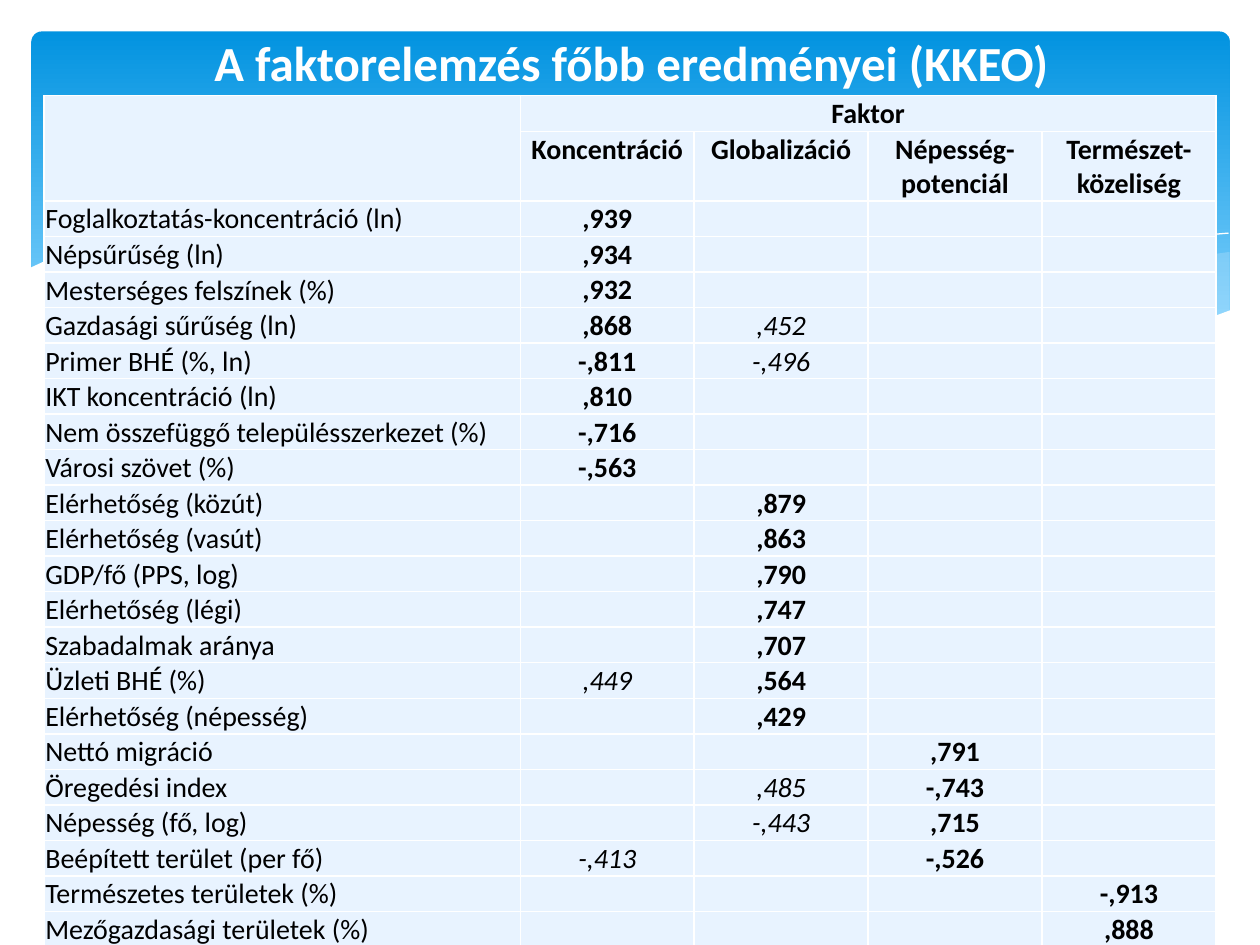
from lxml.etree import SubElement
from pptx import Presentation
from pptx.dml.color import RGBColor as Rgb
from pptx.enum.shapes import MSO_SHAPE as Shape
from pptx.enum.text import MSO_ANCHOR as Anchor, PP_ALIGN as Align
from pptx.oxml import parse_xml
from pptx.oxml.ns import nsdecls, qn
from pptx.util import Pt

COLORS = {"white": "FFFFFF", "black": "000000", "sky": "0293E0",
          "light_sky": "83D3FE", "wave": "C6E7FC", "cell": "E8F3FF"}
COLUMNS, ROWS, STEP = 1000, 750, 9144  # grid of hundredths of an inch

# Waves of the banner, as grid points
RIGHT_WAVE = [(975, 200), (948, 204), (921, 210), (891, 216), (861, 223),
              (805, 237), (753, 248), (706, 257), (661, 265), (691, 269),
              (732, 274), (769, 277), (803, 278), (844, 277), (881, 273),
              (913, 267), (942, 259), (963, 252), (976, 247), (976, 200)]
MIDDLE_WAVE = [(893, 273), (866, 269), (807, 260), (741, 247), (668, 231),
               (613, 218), (569, 208), (528, 200), (489, 194), (442, 189),
               (399, 186), (361, 185), (328, 187), (286, 191), (342, 199),
               (404, 211), (449, 222), (530, 240), (601, 255), (665, 266),
               (722, 274), (773, 277), (818, 278), (857, 277), (893, 273)]
LONG_CURVE = [(309, 195), (328, 192), (353, 189), (387, 187), (433, 187),
              (469, 189), (510, 192), (556, 197), (608, 204), (665, 213),
              (727, 226), (795, 241), (869, 261), (907, 272)]
SHORT_CURVE = [(613, 257), (653, 246), (695, 235), (748, 223), (806, 210),
               (866, 199), (910, 192), (951, 187), (975, 185)]
WHITE_WAVE = [(977, 246), (950, 256), (920, 265), (887, 271), (850, 275),
              (809, 277), (761, 275), (708, 270), (648, 262), (579, 250),
              (503, 233), (447, 220), (391, 207), (340, 197), (292, 190),
              (250, 186), (211, 184), (177, 184), (146, 185), (119, 187),
              (95, 191), (76, 195), (59, 199), (46, 203), (36, 207),
              (23, 213), (23, 329), (977, 329)]

# Factor loadings: label, then {factor column: value}
FACTORS = ["Koncentráció", "Globalizáció", "Népesség-potenciál", "Természet-közeliség"]
LOADINGS = [
    ("Foglalkoztatás-koncentráció (ln)", {1: ",939"}),
    ("Népsűrűség (ln)", {1: ",934"}),
    ("Mesterséges felszínek (%)", {1: ",932"}),
    ("Gazdasági sűrűség (ln)", {1: ",868", 2: ",452"}),
    ("Primer BHÉ (%, ln)", {1: "-,811", 2: "-,496"}),
    ("IKT koncentráció (ln)", {1: ",810"}),
    ("Nem összefüggő településszerkezet (%)", {1: "-,716"}),
    ("Városi szövet (%)", {1: "-,563"}),
    ("Elérhetőség (közút)", {2: ",879"}),
    ("Elérhetőség (vasút)", {2: ",863"}),
    ("GDP/fő (PPS, log)", {2: ",790"}),
    ("Elérhetőség (légi)", {2: ",747"}),
    ("Szabadalmak aránya", {2: ",707"}),
    ("Üzleti BHÉ (%)", {1: ",449", 2: ",564"}),
    ("Elérhetőség (népesség)", {2: ",429"}),
    ("Nettó migráció", {3: ",791"}),
    ("Öregedési index", {2: ",485", 3: "-,743"}),
    ("Népesség (fő, log)", {2: "-,443", 3: ",715"}),
    ("Beépített terület (per fő)", {1: "-,413", 3: "-,526"}),
    ("Természetes területek (%)", {4: "-,913"}),
    ("Mezőgazdasági területek (%)", {4: ",888"}),
]


def rgb(name):
    return Rgb.from_string(COLORS[name])


def write(frame, text, size=16, color="black", bold=False, italic=False,
          align=Align.LEFT, font="Calibri"):
    """Put formatted text in a frame; empty text only keeps the line height."""
    para = frame.paragraphs[0]
    para.alignment = align
    if not text:
        SubElement(para._p, qn("a:endParaRPr"), sz=str(size * 100))
        return
    span = para.add_run()
    span.text = text
    span.font.name, span.font.size = font, Pt(size)
    span.font.bold, span.font.italic = bold, italic
    span.font.color.rgb = rgb(color)


class Slide:
    def __init__(self, deck):
        self.page = deck.slides.add_slide(deck.slide_layouts[5])
        self.shapes = self.page.shapes

    def banner(self, left, top, width, height):
        box = self.shapes.add_shape(Shape.ROUNDED_RECTANGLE, left * STEP, top * STEP,
                                    width * STEP, height * STEP)
        box.adjustments[0] = 0.03
        box.shadow.inherit = False
        box.line.fill.background()
        box.fill.gradient()
        box.fill.gradient_angle = 270
        for stop, name, place in zip(box.fill.gradient_stops, ("sky", "light_sky"), (0, 0.9)):
            stop.color.rgb, stop.position = rgb(name), place

    def outline(self, points, fill=None, alpha=100):
        """A filled wave, or a thin white curve when there is no fill."""
        builder = self.shapes.build_freeform(*points[0], scale=STEP)
        builder.add_line_segments(points[1:], close=fill is not None)
        wave = builder.convert_to_shape()
        wave.shadow.inherit = False
        if fill is None:
            wave.fill.background()
            wave.line.color.rgb = rgb("white")
            wave.line.width = Pt(0)
            return
        wave.line.fill.background()
        wave.fill.solid()
        wave.fill.fore_color.rgb = rgb(fill)
        if alpha < 100:
            tint = wave.element.spPr.find(".//" + qn("a:srgbClr"))
            SubElement(tint, qn("a:alpha"), val=str(alpha * 1000))

    def title(self, text, left, top, width, height):
        box = self.shapes.title
        box.left, box.top, box.width, box.height = (
            n * STEP for n in (left, top, width, height))
        box.text_frame.vertical_anchor = Anchor.MIDDLE
        write(box.text_frame, text, size=28, color="white", bold=True, align=Align.CENTER)
        box.element.getparent().append(box.element)  # in front of the banner

    def table(self, left, top, widths, heights):
        frame = self.shapes.add_table(len(heights), len(widths), left * STEP, top * STEP,
                                      sum(widths) * STEP, sum(heights) * STEP)
        grid = frame.table
        for column, width in zip(grid.columns, widths):
            column.width = width * STEP
        for row, height in zip(grid.rows, heights):
            row.height = height * STEP
        return grid

    def cell(self, cell, text="", anchor=Anchor.TOP, **style):
        cell.margin_left = cell.margin_right = cell.margin_top = STEP
        cell.margin_bottom = 0
        cell.vertical_anchor = anchor
        write(cell.text_frame, text, **style)
        for side in ("lnL", "lnR", "lnT", "lnB"):
            cell._tc.get_or_add_tcPr().append(parse_xml(
                f'<a:{side} {nsdecls("a")} w="12700"><a:solidFill>'
                f'<a:srgbClr val="{COLORS["white"]}"/></a:solidFill></a:{side}>'))
        cell.fill.solid()
        cell.fill.fore_color.rgb = rgb("cell")


def main():
    deck = Presentation()
    deck.slide_width, deck.slide_height = COLUMNS * STEP, ROWS * STEP
    slide = Slide(deck)

    # Banner with waves
    slide.banner(25, 25, 951, 270)
    slide.outline(RIGHT_WAVE, fill="wave", alpha=29)
    slide.outline(MIDDLE_WAVE, fill="wave", alpha=40)
    slide.outline(LONG_CURVE)
    slide.outline(SHORT_CURVE)
    slide.outline(WHITE_WAVE, fill="white")
    slide.title("A faktorelemzés főbb eredményei (KKEO)", 51, 0, 900, 99)

    # Table header
    grid = slide.table(35, 76, [378] + [138] * 4, [26, 52] + [26] * len(LOADINGS))
    grid.cell(0, 0).merge(grid.cell(1, 0))
    grid.cell(0, 1).merge(grid.cell(0, 4))
    head = {"bold": True, "align": Align.CENTER}
    for column, factor in enumerate(["", *FACTORS]):
        slide.cell(grid.cell(0, column), "Faktor" if column == 1 else "",
                   anchor=Anchor.BOTTOM, **head)
        slide.cell(grid.cell(1, column), factor, **head)

    # Table body: the strongest loading of a row is bold, the others italic
    for row, (label, values) in enumerate(LOADINGS, start=2):
        slide.cell(grid.cell(row, 0), label, anchor=Anchor.MIDDLE)
        strongest = max(values.values(), key=lambda value: value.lstrip("-"))
        for column in range(1, 5):
            value = values.get(column, "")
            slide.cell(grid.cell(row, column), value, bold=value == strongest,
                       italic=value != strongest, align=Align.CENTER)

    deck.save("out.pptx")


if __name__ == "__main__":
    main()
